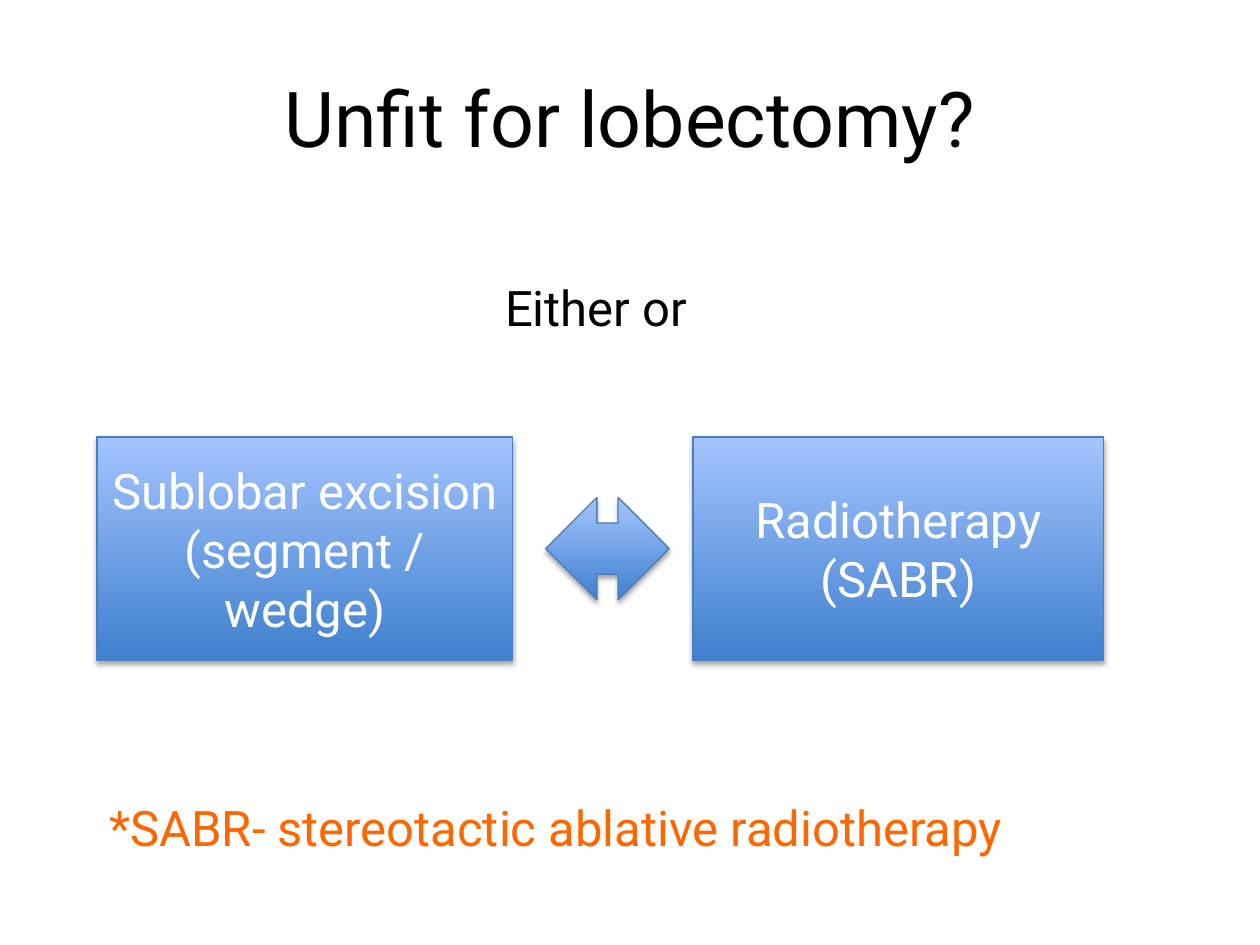
from lxml import etree
from pptx import Presentation
from pptx.enum import shapes, text
from pptx.dml.color import RGBColor
from pptx.oxml import ns
from pptx.util import Pt

COLORS = {"ink": "000000", "paper": "FFFFFF", "note": "FF6600",
          "deep": "3F80CE", "pale": "A4C4FF", "edge": "4B7EBC"}
FONT = "Roboto"
TITLE = "Unfit for lobectomy?"
TITLE_BOX = (36, 21.6, 648, 90)
ROW_TOP, ROW_HEIGHT = 249.8, 127.5
ARROW_HEIGHT = 58.5
OPTIONS = [("Sublobar excision (segment / wedge)", 55.4, 237.6),
           ("Radiotherapy (SABR)", 396, 234.7)]
ARROW = (311.8, ROW_TOP + (ROW_HEIGHT - ARROW_HEIGHT) / 2, 70.6, ARROW_HEIGHT)
CAPTIONS = [("Either or", (281.5, 154.8, 121.7, 41), "ink"),
            ("*SABR- stereotactic ablative radiotherapy", (55.4, 452.2, 535, 41), "note")]


def rgb(name):
    return RGBColor.from_string(COLORS[name])


def write(frame, words, color, size=28, align=None):
    paragraph = frame.paragraphs[0]
    paragraph.alignment = align
    run = paragraph.add_run()
    run.text = words
    run.font.name, run.font.size = FONT, Pt(size)
    run.font.color.rgb = rgb(color)


def add_shadow(shape):
    shape.shadow.inherit = False
    effects = shape._element.spPr.find(ns.qn("a:effectLst"))
    shadow = etree.SubElement(effects, ns.qn("a:outerShdw"), blurRad=str(Pt(3.1)),
                              dist=str(Pt(1.8)), dir="5400000", rotWithShape="0")
    color = etree.SubElement(shadow, ns.qn("a:srgbClr"), val=COLORS["ink"])
    etree.SubElement(color, ns.qn("a:alpha"), val="35000")


def add_glossy(slide, kind, box):
    shape = slide.shapes.add_shape(kind, *map(Pt, box))
    shape.fill.gradient()
    shape.fill.gradient_angle = 90
    for stop, name, position in zip(shape.fill.gradient_stops, ("deep", "pale"), (0, 1)):
        stop.color.rgb = rgb(name)
        stop.position = position
    shape.line.color.rgb = rgb("edge")
    shape.line.width = Pt(0.75)
    add_shadow(shape)
    return shape


def main():
    """Build the slide on treatment options for patients unfit for lobectomy."""
    presentation = Presentation()
    presentation.slide_width, presentation.slide_height = Pt(720), Pt(540)
    slide = presentation.slides.add_slide(presentation.slide_layouts[5])

    title = slide.shapes.title
    title.left, title.top, title.width, title.height = map(Pt, TITLE_BOX)
    title.text_frame.vertical_anchor = text.MSO_ANCHOR.MIDDLE
    write(title.text_frame, TITLE, "ink", 44, text.PP_ALIGN.CENTER)

    for words, left, width in OPTIONS:
        option = add_glossy(slide, shapes.MSO_SHAPE.RECTANGLE,
                            (left, ROW_TOP, width, ROW_HEIGHT))
        option.text_frame.vertical_anchor = text.MSO_ANCHOR.MIDDLE
        write(option.text_frame, words, "paper", align=text.PP_ALIGN.CENTER)
    add_glossy(slide, shapes.MSO_SHAPE.LEFT_RIGHT_ARROW, ARROW)

    for words, box, color in CAPTIONS:
        frame = slide.shapes.add_textbox(*map(Pt, box)).text_frame
        frame.word_wrap = False
        frame.auto_size = text.MSO_AUTO_SIZE.SHAPE_TO_FIT_TEXT
        write(frame, words, color)

    presentation.save("out.pptx")


if __name__ == "__main__":
    main()
